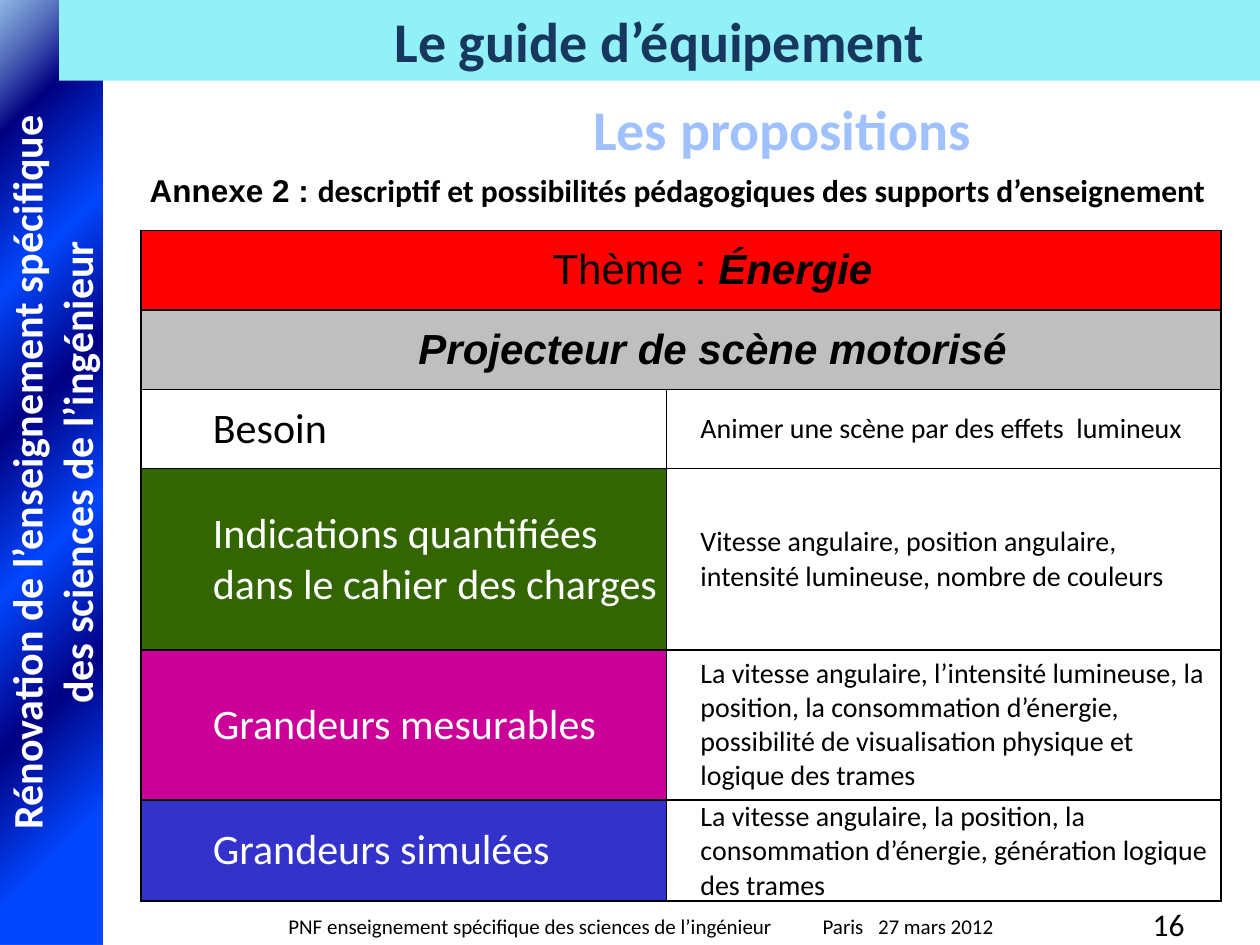
"""Builds the equipment guide slide: annex 2, motorised stage projector."""
from dataclasses import dataclass

from lxml.etree import SubElement
from pptx import Presentation
from pptx.dml.color import RGBColor as RGB
from pptx.enum.shapes import MSO_SHAPE as SHAPE
from pptx.enum.text import MSO_ANCHOR as ANCHOR, MSO_AUTO_SIZE as AUTO, PP_ALIGN as ALIGN
from pptx.oxml import parse_xml
from pptx.oxml.ns import nsdecls, qn
from pptx.util import Inches, Pt


@dataclass(frozen=True)
class Theme:
    body: str = "Calibri"
    accent: str = "Arial"
    black: str = "000000"
    white: str = "FFFFFF"
    banner: str = "92F1F6"
    navy: str = "17375E"
    sky: str = "A0C1FF"
    red: str = "FF0000"
    grey: str = "BFBFBF"
    green: str = "336600"
    magenta: str = "CC0099"
    indigo: str = "3333CC"
    bright: str = "0047FF"
    deep: str = "000082"
    haze: str = "558ED5"
    heading: int = 32
    large: int = 24
    medium: int = 18
    detail: int = 16
    small: int = 12


theme = Theme()
deck = Presentation()
deck.slide_width, deck.slide_height = Inches(10), Inches(7.5)
slide = deck.slides.add_slide(deck.slide_layouts[5])
COL, ROW = deck.slide_width / 100, deck.slide_height / 75


def area(left, top, width, height):
    return int(left * COL), int(top * ROW), int(width * COL), int(height * ROW)


def style(run, size, color=theme.black, font=theme.body, bold=False, italic=False):
    run.font.size, run.font.name = Pt(size), font
    run.font.bold, run.font.italic = bold, italic
    run.font.color.rgb = RGB.from_string(color)


sidebar = slide.shapes.add_shape(SHAPE.RECTANGLE, *area(0, 0, 8.1, 75))
sidebar.shadow.inherit = False
sidebar.line.fill.background()
stops = "".join(
    f'<a:gs pos="{share * 1000}"><a:srgbClr val="{color}"><a:alpha val="{alpha * 1000}"/></a:srgbClr></a:gs>'
    for share, color, alpha in [
        (13, theme.bright, 100), (28, theme.deep, 100), (43, theme.bright, 100),
        (58, theme.deep, 100), (72, theme.bright, 100), (87, theme.deep, 100),
        (100, theme.haze, 65)])
sidebar._element.spPr.find(qn("a:prstGeom")).addnext(parse_xml(
    f'<a:gradFill {nsdecls("a")} rotWithShape="1"><a:gsLst>{stops}</a:gsLst>'
    '<a:path path="circle"><a:fillToRect l="100000" t="100000"/></a:path></a:gradFill>'))
programme = sidebar.text_frame
programme.text = "Rénovation de l’enseignement spécifique\ndes sciences de l’ingénieur"
programme.vertical_anchor = ANCHOR.MIDDLE
programme.margin_left = programme.margin_right = programme.margin_top = programme.margin_bottom = 0
programme._txBody.bodyPr.set("vert", "vert270")
for line in programme.paragraphs:
    line.alignment = ALIGN.CENTER
    style(line.runs[0], theme.large, theme.white, bold=True)
slide.shapes._spTree.insert(2, sidebar._element)

title = slide.shapes.title
title.left, title.top, title.width, title.height = area(4.7, 0, 95.3, 6.4)
title.fill.solid()
title.fill.fore_color.rgb = RGB.from_string(theme.banner)
title.text_frame.text = "Le guide d’équipement"
title.text_frame.auto_size = AUTO.NONE
style(title.text_frame.paragraphs[0].runs[0], theme.heading, theme.navy, bold=True)

captions = [
    (area(46.1, 7, 32.3, 6.4), ALIGN.LEFT, False,
     [("Les propositions", theme.heading, theme.sky, theme.body, True)]),
    (area(10.9, 13.1, 86.3, 4), ALIGN.LEFT, True,
     [("Annexe 2 : ", theme.medium, theme.black, theme.accent, True),
      ("descriptif et possibilités pédagogiques des supports d’enseignement",
       theme.medium, theme.black, theme.body, True)]),
    (area(21.9, 72, 67.2, 3), ALIGN.LEFT, True,
     [("PNF enseignement spécifique des sciences de l’ingénieur\tParis\t27 mars 2012", theme.small)]),
    (area(71.7, 71.3, 23.3, 4), ALIGN.RIGHT, True, [("16", theme.medium)]),
]
for place, alignment, wrap, parts in captions:
    caption = slide.shapes.add_textbox(*place).text_frame
    caption.word_wrap = wrap
    paragraph = caption.paragraphs[0]
    paragraph.alignment = alignment
    for words, *look in parts:
        run = paragraph.add_run()
        run.text = words
        style(run, *look)
    if "\t" in paragraph.text:
        tabs = SubElement(paragraph._p.get_or_add_pPr(), qn("a:tabLst"))
        for stop in (42.4, 46.8):
            SubElement(tabs, qn("a:tab"), pos=str(int(stop * COL)), algn="l")

headers = [
    ([("Thème\u00a0: ", False), ("Énergie", True)], theme.red),
    ([("Projecteur de scène motorisé", True)], theme.grey),
]
criteria = [
    ("Besoin", theme.white, theme.black, "Animer une scène par des effets  lumineux"),
    ("Indications quantifiées dans le cahier des charges", theme.green, theme.white,
     "Vitesse angulaire, position angulaire, intensité lumineuse, nombre de couleurs"),
    ("Grandeurs mesurables", theme.magenta, theme.white,
     "La vitesse angulaire, l’intensité lumineuse, la position, la consommation d’énergie, "
     "possibilité de visualisation physique et logique des trames"),
    ("Grandeurs simulées", theme.indigo, theme.white,
     "La vitesse angulaire, la position, la consommation d’énergie, génération logique des trames"),
]
widths, heights = (41.7, 44), (6.3, 6.3, 6.3, 14.4, 11.9, 8)
sheet = slide.shapes.add_table(
    len(heights), len(widths), *area(11.2, 18.3, sum(widths), sum(heights))).table
sheet.first_row = sheet.horz_banding = False
for column, width in zip(sheet.columns, widths):
    column.width = int(width * COL)
for row, height in zip(sheet.rows, heights):
    row.height = int(height * ROW)

for index, (parts, fill) in enumerate(headers):
    sheet.cell(index, 0).merge(sheet.cell(index, 1))
    paragraph = sheet.cell(index, 0).text_frame.paragraphs[0]
    paragraph.alignment = ALIGN.CENTER
    for words, strong in parts:
        run = paragraph.add_run()
        run.text = words
        style(run, theme.large, font=theme.accent, bold=strong, italic=strong)
for index, (name, fill, ink, description) in enumerate(criteria, len(headers)):
    for side, words, size, color in ((0, name, theme.large, ink), (1, description, theme.detail, theme.black)):
        paragraph = sheet.cell(index, side).text_frame.paragraphs[0]
        paragraph.text = words
        style(paragraph.runs[0], size, color)

fills = [(fill, fill) for parts, fill in headers] + [(fill, theme.white) for name, fill, *rest in criteria]
for index, pair in enumerate(fills):
    for side, (fill, indent) in enumerate(zip(pair, (5, 2))):
        cell = sheet.cell(index, side)
        cell.vertical_anchor = ANCHOR.MIDDLE
        cell.margin_left = cell.margin_right = int(0.7 * COL)
        cell.margin_top = cell.margin_bottom = 0
        cell.text_frame.paragraphs[0]._p.get_or_add_pPr().set("marL", str(int(indent * COL)))
        properties = cell._tc.get_or_add_tcPr()
        for edge in ("lnL", "lnR", "lnT", "lnB"):
            border = SubElement(properties, qn(f"a:{edge}"), w=str(Pt(1)))
            SubElement(SubElement(border, qn("a:solidFill")), qn("a:srgbClr"), val=theme.black)
        cell.fill.solid()
        cell.fill.fore_color.rgb = RGB.from_string(fill)

deck.save("out.pptx")
